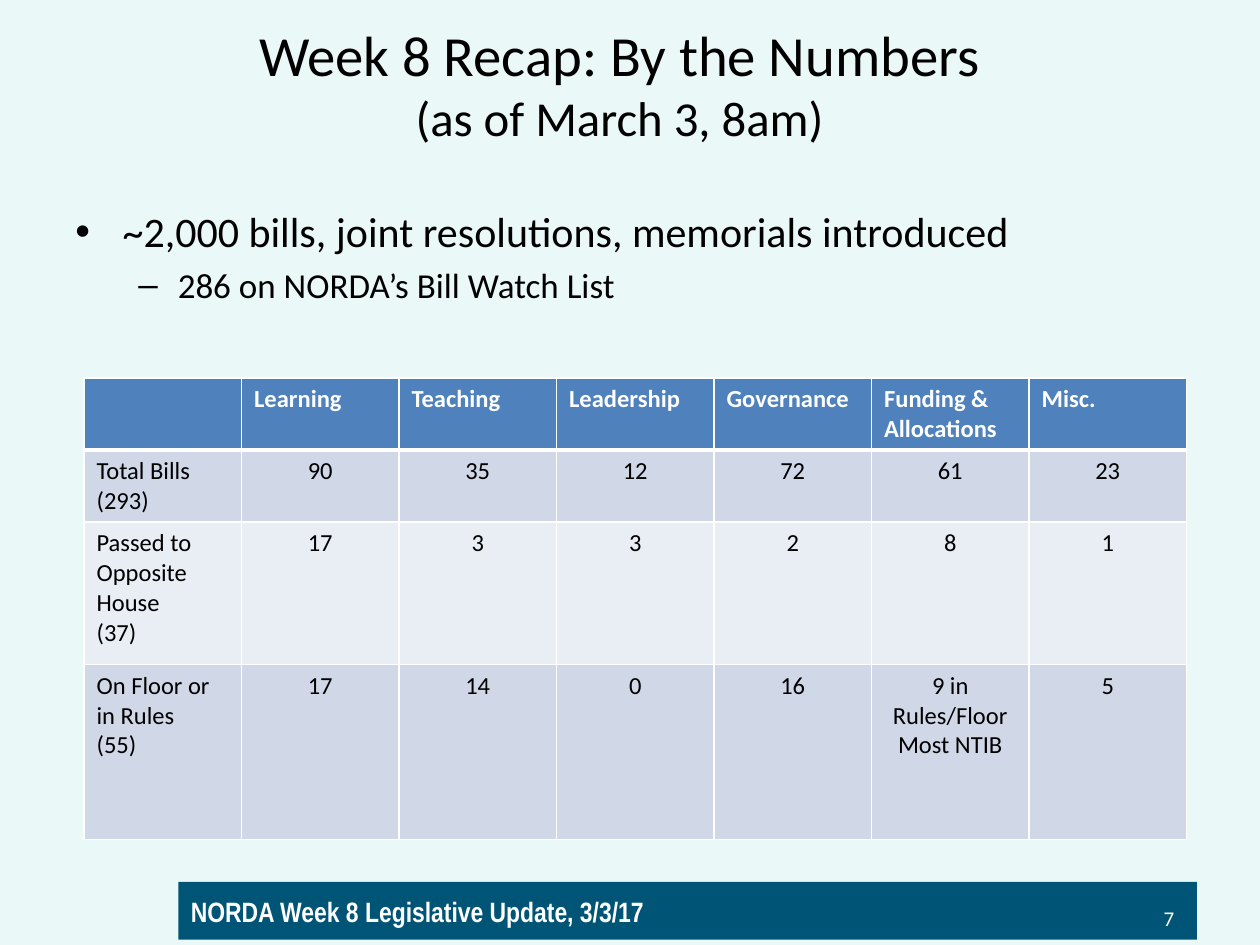
import pptx
import pptx.util
import pptx.dml.color
import pptx.enum.shapes
import pptx.enum.text
import pptx.oxml.ns
import lxml.etree

Pt = pptx.util.Pt
RGBColor = pptx.dml.color.RGBColor
ALIGN = pptx.enum.text.PP_ALIGN
MIDDLE = pptx.enum.text.MSO_ANCHOR.MIDDLE
qn = pptx.oxml.ns.qn

BLACK = RGBColor(0x00, 0x00, 0x00)
WHITE = RGBColor(0xFF, 0xFF, 0xFF)
PALE_AQUA = RGBColor(0xEA, 0xF8, 0xF8)
DEEP_TEAL = RGBColor(0x00, 0x54, 0x76)
HEADER_BLUE = RGBColor(0x4F, 0x81, 0xBD)
BAND_DARK = RGBColor(0xD0, 0xD8, 0xE8)
BAND_LIGHT = RGBColor(0xE9, 0xED, 0xF4)


def style(paragraph, size, color, bold=False, font="Calibri", align=ALIGN.LEFT):
    paragraph.alignment = align
    for run in paragraph.runs:
        run.font.size = Pt(size)
        run.font.name = font
        run.font.bold = bold
        run.font.color.rgb = color


def add_border(cell, side, width):
    line = lxml.etree.SubElement(cell._tc.get_or_add_tcPr(), qn(f"a:{side}"), w=str(Pt(width)))
    fill = lxml.etree.SubElement(line, qn("a:solidFill"))
    lxml.etree.SubElement(fill, qn("a:srgbClr"), val=str(WHITE))


deck = pptx.Presentation()
deck.slide_width, deck.slide_height = Pt(720), Pt(540)
slide = deck.slides.add_slide(deck.slide_layouts[5])
slide.background.fill.solid()
slide.background.fill.fore_color.rgb = PALE_AQUA

footer = slide.shapes.add_shape(
    pptx.enum.shapes.MSO_SHAPE.RECTANGLE, Pt(102), Pt(504), Pt(582), Pt(33))
footer.shadow.inherit = False
footer.fill.solid()
footer.fill.fore_color.rgb = DEEP_TEAL
footer.line.fill.background()
footer.text_frame.text = "NORDA Week 8 Legislative Update, 3/3/17"
footer.text_frame.vertical_anchor = MIDDLE
style(footer.text_frame.paragraphs[0], 16, WHITE, bold=True, font="Arial Narrow")

title = slide.shapes.title
title.left, title.top, title.width, title.height = Pt(30), Pt(16), Pt(648), Pt(63)
title.text_frame.text = "Week 8 Recap: By the Numbers\v(as of March 3, 8am)"
title.text_frame.auto_size = pptx.enum.text.MSO_AUTO_SIZE.NONE
title.text_frame.vertical_anchor = MIDDLE
heading = title.text_frame.paragraphs[0]
style(heading, 32.4, BLACK, align=ALIGN.CENTER)
heading.runs[1].font.size = Pt(27.9)

summary = slide.shapes.add_textbox(Pt(36), Pt(114), Pt(666), Pt(368.5)).text_frame
summary.word_wrap = True
summary.text = ("~2,000 bills, joint resolutions, memorials introduced\n"
                "286 on NORDA’s Bill Watch List")
bullet_styles = [("•", 24, 27, 27), ("–", 20, 58.5, 22.5)]
for level, (mark, size, margin, hanging) in enumerate(bullet_styles):
    point = summary.paragraphs[level]
    point.level = level
    point.space_before = Pt(size * 0.2)
    style(point, size, BLACK)
    properties = point._p.get_or_add_pPr()
    properties.set("marL", str(Pt(margin)))
    properties.set("indent", str(-Pt(hanging)))
    lxml.etree.SubElement(properties, qn("a:buFont"), typeface="Arial")
    lxml.etree.SubElement(properties, qn("a:buChar"), char=mark)

page_number = slide.shapes.add_textbox(Pt(510), Pt(510), Pt(168), Pt(29)).text_frame
page_number.word_wrap = True
page_number.vertical_anchor = MIDDLE
page_number.text = "7"
style(page_number.paragraphs[0], 12, WHITE, align=ALIGN.RIGHT)

bill_counts = [
    ["", "Learning", "Teaching", "Leadership", "Governance", "Funding & Allocations", "Misc."],
    ["Total Bills (293)", "90", "35", "12", "72", "61", "23"],
    ["Passed to Opposite House\n(37)", "17", "3", "3", "2", "8", "1"],
    ["On Floor or in Rules\n(55)", "17", "14", "0", "16", "9 in Rules/Floor\nMost NTIB", "5"],
]
row_heights = [41.2, 41.2, 81.4, 100]
row_fills = [HEADER_BLUE, BAND_DARK, BAND_LIGHT, BAND_DARK]
bills = slide.shapes.add_table(
    4, 7, Pt(48), Pt(216), Pt(630), Pt(sum(row_heights))).table
for column in bills.columns:
    column.width = Pt(90)
for r, counts in enumerate(bill_counts):
    bills.rows[r].height = Pt(row_heights[r])
    is_header = r == 0
    for c, entry in enumerate(counts):
        cell = bills.cell(r, c)
        cell.text_frame.text = entry
        for paragraph in cell.text_frame.paragraphs:
            style(paragraph, 14, WHITE if is_header else BLACK, bold=is_header,
                  align=ALIGN.LEFT if is_header or c == 0 else ALIGN.CENTER)
        for side in ("lnL", "lnR", "lnT", "lnB"):
            under_header = (r, side) in ((0, "lnB"), (1, "lnT"))
            add_border(cell, side, 3 if under_header else 1)
        cell.fill.solid()
        cell.fill.fore_color.rgb = row_fills[r]

deck.save("out.pptx")
